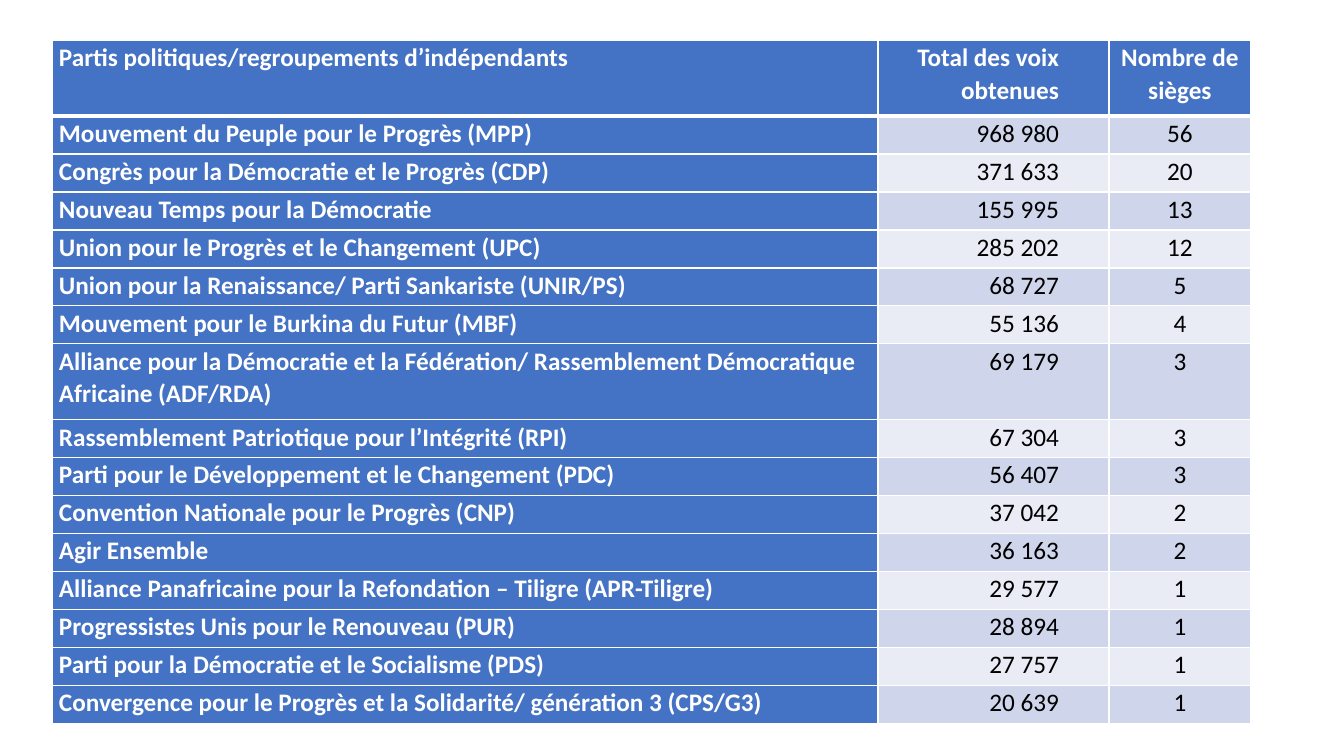
from lxml import etree
from pptx import Presentation
from pptx.dml.color import RGBColor
from pptx.enum.text import PP_ALIGN
from pptx.oxml.ns import qn
from pptx.util import Pt

LEFT, RIGHT, CENTER = PP_ALIGN.LEFT, PP_ALIGN.RIGHT, PP_ALIGN.CENTER

HEADER = ("Partis politiques/regroupements d’indépendants", "Total des voix obtenues", "Nombre de sièges")
RESULTS = [
    ("Mouvement du Peuple pour le Progrès (MPP)", "968 980", "56"),
    ("Congrès pour la Démocratie et le Progrès (CDP)", "371 633", "20"),
    ("Nouveau Temps pour la Démocratie", "155 995", "13"),
    ("Union pour le Progrès et le Changement (UPC)", "285 202", "12"),
    ("Union pour la Renaissance/ Parti Sankariste (UNIR/PS)", "68 727", "5"),
    ("Mouvement pour le Burkina du Futur (MBF)", "55 136", "4"),
    ("Alliance pour la Démocratie et la Fédération/ Rassemblement Démocratique Africaine (ADF/RDA)",
     "69 179", "3"),
    ("Rassemblement Patriotique pour l’Intégrité (RPI)", "67 304", "3"),
    ("Parti pour le Développement et le Changement (PDC)", "56 407", "3"),
    ("Convention Nationale pour le Progrès (CNP)", "37 042", "2"),
    ("Agir Ensemble", "36 163", "2"),
    ("Alliance Panafricaine pour la Refondation – Tiligre (APR-Tiligre)", "29 577", "1"),
    ("Progressistes Unis pour le Renouveau (PUR)", "28 894", "1"),
    ("Parti pour la Démocratie et le Socialisme (PDS)", "27 757", "1"),
    ("Convergence pour le Progrès et la Solidarité/ génération 3 (CPS/G3)", "20 639", "1"),
]
ROWS = [HEADER] + RESULTS

WHITE = RGBColor(0xFF, 0xFF, 0xFF)
BLACK = RGBColor(0x00, 0x00, 0x00)
BLUE = RGBColor(0x44, 0x72, 0xC4)
BANDS = (RGBColor(0xE9, 0xEB, 0xF5), RGBColor(0xCF, 0xD5, 0xEA))

SLIDE_WIDTH, SLIDE_HEIGHT = 1344, 756
TABLE_LEFT, TABLE_TOP = 52, 40
COLUMN_WIDTHS = (826, 231, 142)
ALIGNMENTS = (LEFT, RIGHT, CENTER)
RIGHT_MARGINS = (7, 50, 7)
LEFT_MARGIN = 7
LINE_HEIGHT = 38
TWO_LINE_ROWS = (0, 7)


def px(length):
    return round(length * 914400 / 100.8)


def write_text(cell, text, color=BLACK, bold=False, align=LEFT):
    paragraph = cell.text_frame.paragraphs[0]
    paragraph.alignment = align
    paragraph.line_spacing = 1.07
    paragraph.space_after = Pt(8)
    run = paragraph.add_run()
    run.text = text
    run.font.name = "Calibri"
    run.font.size = Pt(18)
    run.font.bold = bold
    run.font.color.rgb = color


def add_borders(cell, top, bottom):
    properties = cell._tc.get_or_add_tcPr()
    for side, width in (("L", 1), ("R", 1), ("T", top), ("B", bottom)):
        line = etree.SubElement(properties, qn(f"a:ln{side}"), w=str(Pt(width)))
        fill = etree.SubElement(line, qn("a:solidFill"))
        etree.SubElement(fill, qn("a:srgbClr"), val=str(WHITE))


def main():
    presentation = Presentation()
    presentation.slide_width = px(SLIDE_WIDTH)
    presentation.slide_height = px(SLIDE_HEIGHT)
    slide = presentation.slides.add_slide(presentation.slide_layouts[6])

    heights = [LINE_HEIGHT * (2 if row in TWO_LINE_ROWS else 1) for row in range(len(ROWS))]
    table = slide.shapes.add_table(
        len(ROWS), len(COLUMN_WIDTHS), px(TABLE_LEFT), px(TABLE_TOP),
        px(sum(COLUMN_WIDTHS)), px(sum(heights))).table
    for column, width in zip(table.columns, COLUMN_WIDTHS):
        column.width = px(width)

    for row, texts in enumerate(ROWS):
        table.rows[row].height = px(heights[row])
        for column, text in enumerate(texts):
            cell = table.cell(row, column)
            heading = row == 0 or column == 0
            cell.margin_left = px(LEFT_MARGIN)
            cell.margin_right = px(RIGHT_MARGINS[column])
            cell.margin_top = cell.margin_bottom = 0
            add_borders(cell, top=3 if row == 1 else 1, bottom=3 if row == 0 else 1)
            cell.fill.solid()
            cell.fill.fore_color.rgb = BLUE if heading else BANDS[row % 2]
            write_text(cell, text, color=WHITE if heading else BLACK,
                       bold=heading, align=ALIGNMENTS[column])

    presentation.save("out.pptx")


if __name__ == "__main__":
    main()
